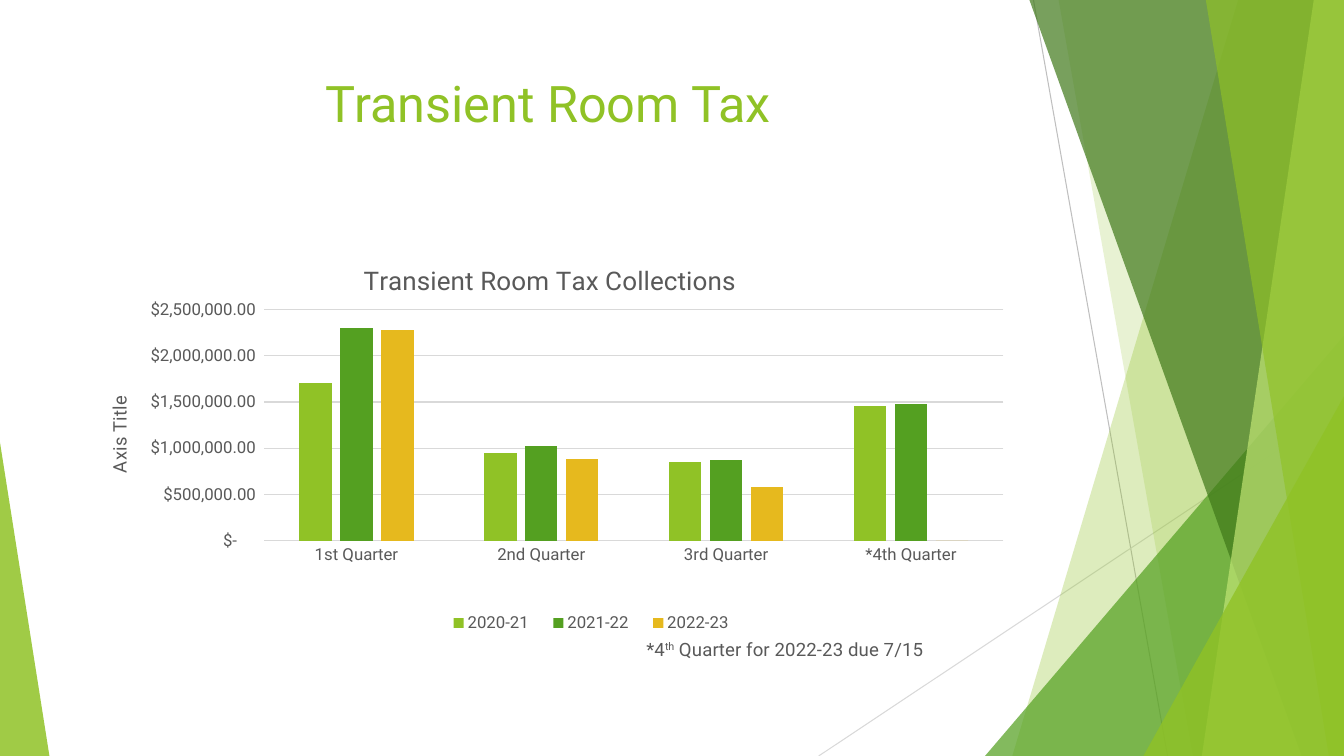
from dataclasses import dataclass

from lxml.etree import SubElement
from pptx import Presentation
from pptx.chart.data import CategoryChartData
from pptx.dml.color import RGBColor
from pptx.enum.chart import XL_CHART_TYPE, XL_LEGEND_POSITION, XL_TICK_MARK
from pptx.enum.shapes import MSO_CONNECTOR, MSO_SHAPE
from pptx.enum.text import MSO_ANCHOR, PP_ALIGN
from pptx.oxml import parse_xml
from pptx.oxml.ns import nsdecls, qn
from pptx.util import Inches, Pt

FONT = "Roboto"
WIDTH, HEIGHT = 13.33, 7.5
COLORS = {
    "lime": "90C226",
    "green": "54A021",
    "forest": "3F7819",
    "pale": "C0E474",
    "gold": "E6B91E",
    "text": "595959",
    "line": "BFBFBF",
    "grid": "D9D9D9",
}


@dataclass
class Ray:
    start: tuple[float, float]
    end: tuple[float, float]
    color: str


@dataclass
class Band:
    """A panel that runs from the slanted left edge to the right side of the page."""
    top_x: float
    bottom_x: float
    color: str
    opacity: int


@dataclass
class Triangle:
    left: float
    top: float
    width: float
    apex: float
    color: str
    opacity: int


@dataclass
class Series:
    name: str
    values: tuple[int, ...]
    color: str


RAYS = [
    Ray((10.25, 0), (11.58, HEIGHT), "line"),
    Ray((WIDTH, 4.03), (8.12, HEIGHT), "grid"),
]
PANELS = [
    Band(12.28, 10.04, "lime", 30),
    Band(10.5, 11.83, "lime", 20),
    Triangle(9.77, 3.33, 3.56, 1, "green", 72),
    Band(10.21, 12.91, "forest", 70),
    Band(13.03, 11.92, "pale", 70),
    Band(11.96, 13.18, "lime", 65),
    Triangle(11.34, 3.93, 1.99, 1, "lime", 80),
    Triangle(0, 4.39, 0.49, 0, "lime", 85),
]
QUARTERS = ["1st Quarter", "2nd Quarter", "3rd Quarter", "*4th Quarter"]
SERIES = [
    Series("2020-21", (1710000, 950000, 850000, 1460000), "lime"),
    Series("2021-22", (2300000, 1030000, 870000, 1480000), "green"),
    Series("2022-23", (2280000, 880000, 580000, 0), "gold"),
]
DOLLARS = '_("$"* #,##0.00_);_("$"* \\(#,##0.00\\);_("$"* "-"??_);_(@_)'
# Chart part -> x, y and, where it matters, w, h as shares of the chart
LAYOUTS = {
    "c:chart/c:title": (0.3, 0.05),
    "c:chart/c:plotArea": (0.2, 0.17, 0.78, 0.55),
    "c:chart/c:legend": (0.38, 0.88, 0.33, 0.07),
    ".//c:valAx/c:title": (0.03, 0.37),
    ".//c:catAx/c:title": (0.6, 0.94),
}


def rgb(name: str) -> RGBColor:
    return RGBColor.from_string(COLORS[name])


def style_font(font, size: float, color: str = "text") -> None:
    font.name = FONT
    font.size = Pt(size)
    font.bold = False
    font.color.rgb = rgb(color)


def draw_ray(shapes, ray: Ray) -> None:
    points = [Inches(value) for value in (*ray.start, *ray.end)]
    line = shapes.add_connector(MSO_CONNECTOR.STRAIGHT, *points)
    line.line.color.rgb = rgb(ray.color)
    line.line.width = Pt(0.75)
    SubElement(line._element.spPr, qn("a:effectLst"))


def draw_panel(shapes, panel: Band | Triangle) -> None:
    if isinstance(panel, Band):
        builder = shapes.build_freeform(Inches(panel.top_x), 0)
        corners = [(WIDTH, 0), (WIDTH, HEIGHT), (panel.bottom_x, HEIGHT)]
        builder.add_line_segments([(Inches(x), Inches(y)) for x, y in corners])
        shape = builder.convert_to_shape()
    else:
        shape = shapes.add_shape(
            MSO_SHAPE.ISOSCELES_TRIANGLE, Inches(panel.left), Inches(panel.top),
            Inches(panel.width), Inches(HEIGHT - panel.top))
        shape.adjustments[0] = panel.apex
    shape.shadow.inherit = False
    shape.line.fill.background()
    shape.fill.solid()
    shape.fill.fore_color.rgb = rgb(panel.color)
    color = shape._element.spPr.find(f".//{qn('a:srgbClr')}")
    SubElement(color, qn("a:alpha"), val=str(panel.opacity * 1000))


def write_title(title, text: str, size: float):
    """Fill a chart or axis title and return its paragraph."""
    paragraph = title.text_frame.paragraphs[0]
    paragraph.text = text
    style_font(paragraph.font, size)
    return paragraph


def place_part(part, shares: tuple[float, ...]) -> None:
    """Fix the position of a chart part."""
    for old in part.findall(qn("c:layout")):
        part.remove(old)
    inner = '<c:layoutTarget val="inner"/>' if part.tag == qn("c:plotArea") else ""
    modes = '<c:xMode val="edge"/><c:yMode val="edge"/>'
    sizes = "".join(f'<c:{key} val="{share}"/>' for key, share in zip("xywh", shares))
    layout = parse_xml(f'<c:layout {nsdecls("c")}><c:manualLayout>{inner}{modes}{sizes}'
                       "</c:manualLayout></c:layout>")
    overlay = part.find(qn("c:overlay"))
    if overlay is None:
        part.insert(0, layout)
    else:
        overlay.addprevious(layout)


def add_tax_chart(shapes) -> None:
    data = CategoryChartData(number_format=DOLLARS)
    data.categories = QUARTERS
    for series in SERIES:
        data.add_series(series.name, series.values)
    box = [Inches(value) for value in (0.74, 2.36, 9.4, 4.24)]
    chart = shapes.add_chart(XL_CHART_TYPE.COLUMN_CLUSTERED, *box, data).chart
    style_font(chart.font, 12)
    write_title(chart.chart_title, "Transient Room Tax Collections", 18.6)

    plot = chart.plots[0]
    plot.gap_width, plot.overlap, plot.vary_by_categories = 219, -27, False
    for bars, series in zip(plot.series, SERIES):
        bars.format.fill.solid()
        bars.format.fill.fore_color.rgb = rgb(series.color)

    amounts, quarters = chart.value_axis, chart.category_axis
    for axis in (amounts, quarters):
        axis.major_tick_mark = axis.minor_tick_mark = XL_TICK_MARK.NONE
        style_font(axis.tick_labels.font, 12)
    amounts.minimum_scale, amounts.maximum_scale, amounts.major_unit = 0, 2500000, 500000
    amounts.tick_labels.number_format = DOLLARS
    amounts.tick_labels.number_format_is_linked = False
    amounts.format.line.fill.background()
    for line in (amounts.major_gridlines.format.line, quarters.format.line):
        line.color.rgb = rgb("grid")
        line.width = Pt(0.75)

    write_title(amounts.axis_title, "Axis Title", 13.3)
    amounts.axis_title.text_frame._txBody.bodyPr.set("rot", "-5400000")
    note = write_title(quarters.axis_title, "*4", 13.3)
    ordinal = note.add_run()
    ordinal.text = "th"
    ordinal.font._element.set("baseline", "30000")
    note.add_run().text = " Quarter for 2022-23 due 7/15"

    chart.has_legend = True
    chart.legend.position = XL_LEGEND_POSITION.BOTTOM
    chart.legend.include_in_layout = False
    style_font(chart.legend.font, 12)
    for query, shares in LAYOUTS.items():
        place_part(chart._chartSpace.xpath(query)[0], shares)


def main() -> None:
    deck = Presentation()
    deck.slide_width, deck.slide_height = Inches(WIDTH), Inches(HEIGHT)
    page = deck.slides.add_slide(deck.slide_layouts[5])
    for ray in RAYS:
        draw_ray(page.shapes, ray)
    for panel in PANELS:
        draw_panel(page.shapes, panel)

    title = page.shapes.title
    title.left, title.top = Inches(0.74), Inches(0.67)
    title.width, title.height = Inches(9.4), Inches(1.44)
    title.text_frame.text = "Transient Room Tax"
    title.text_frame.vertical_anchor = MSO_ANCHOR.TOP
    heading = title.text_frame.paragraphs[0]
    heading.alignment = PP_ALIGN.CENTER
    style_font(heading.font, 36, "lime")
    add_tax_chart(page.shapes)
    deck.save("out.pptx")


if __name__ == "__main__":
    main()
